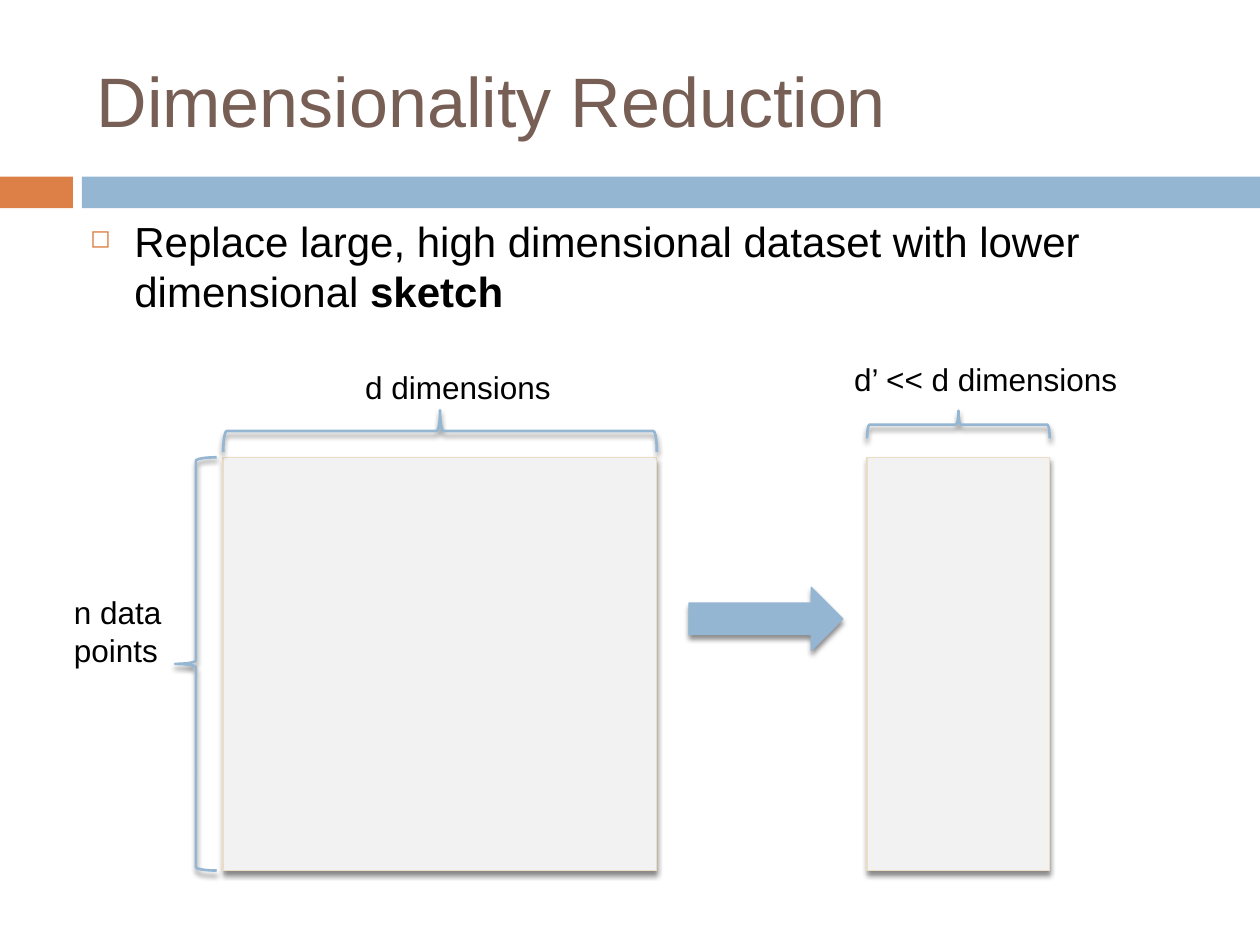
"""Build a slide showing a wide data matrix reduced to a narrow sketch."""
from lxml import etree
from pptx import Presentation
from pptx import util as u
from pptx.dml import color
from pptx.enum import shapes, text
from pptx.oxml import ns

COLORS = {
    "orange": "DD8047",
    "blue": "94B6D2",
    "brown": "775F55",
    "gray": "F2F2F2",
    "sand": "EBDDC3",
    "black": "000000",
}
SHAPE = shapes.MSO_SHAPE
MATRIX_TOP, MATRIX_HEIGHT = 9.22, 8.33
FULL_LEFT, FULL_WIDTH = 4.5, 8.74
SKETCH_LEFT, SKETCH_WIDTH = 17.48, 3.68


def rgb(name):
    return color.RGBColor.from_string(COLORS[name])


def sub(parent, tag, **attrs):
    return etree.SubElement(parent, ns.qn(tag), attrs)


def add_shadow(sp):
    effects = sub(sp._element.spPr, "a:effectLst")
    shadow = sub(effects, "a:outerShdw", blurRad=str(u.Pt(3)), dist=str(u.Pt(2.4)),
                 dir="5400000", rotWithShape="0")
    tint = sub(shadow, "a:srgbClr", val=COLORS["black"])
    sub(tint, "a:alpha", val="45000")


def add_figure(s, kind, box, fill=None, line=None, width=0.79, shadow=True):
    sp = s.shapes.add_shape(kind, *map(u.Cm, box))
    if fill:
        sp.fill.solid()
        sp.fill.fore_color.rgb = rgb(fill)
    else:
        sp.fill.background()
    if line:
        sp.line.color.rgb = rgb(line)
        sp.line.width = u.Pt(width)
    else:
        sp.line.fill.background()
    if shadow:
        add_shadow(sp)
    else:
        sp.shadow.inherit = False
    return sp


def add_matrix(s, left, width):
    box = (left, MATRIX_TOP, width, MATRIX_HEIGHT)
    add_figure(s, SHAPE.RECTANGLE, box, "gray", "sand")


def add_brace(s, box):
    return add_figure(s, SHAPE.LEFT_BRACE, box, line="blue", width=1.5)


def add_top_brace(s, left, width, middle, depth):
    box = (left + (width - depth) / 2, middle - width / 2, depth, width)
    add_brace(s, box).rotation = 90


def add_text(s, box, words, size, fill="black", anchor=text.MSO_ANCHOR.TOP):
    tf = s.shapes.add_textbox(*map(u.Cm, box)).text_frame
    tf.word_wrap = True
    tf.vertical_anchor = anchor
    p = tf.paragraphs[0]
    p.text = words
    p.font.size = u.Pt(size)
    for r in p.runs:
        format_run(r, size, fill)
    return p


def format_run(r, size, fill, bold=False):
    r.font.name = "Arial"
    r.font.size = u.Pt(size)
    r.font.color.rgb = rgb(fill)
    r.font.bold = bold


def add_bullet(p):
    p.space_before = u.Pt(7)
    pPr = p._p.get_or_add_pPr()
    indent = u.Cm(0.89)
    pPr.set("marL", str(indent))
    pPr.set("indent", str(-indent))
    sub(sub(pPr, "a:buClr"), "a:srgbClr", val=COLORS["orange"])
    sub(pPr, "a:buSzPct", val="60000")
    sub(pPr, "a:buChar", char="◻")


def add_header(s):
    bar_top, bar_height = 3.56, 0.64
    for left, width, fill in ((0, 1.47, "orange"), (1.65, 23.75, "blue")):
        box = (left, bar_top, width, bar_height)
        add_figure(s, SHAPE.RECTANGLE, box, fill, shadow=False)
    add_text(s, (1.7, 0.64, 22.66, 2.74), "Dimensionality Reduction", 40, "brown",
             text.MSO_ANCHOR.MIDDLE)


def add_body(s):
    p = add_text(s, (1.57, 4.22, 22.66, 12.5),
                 "Replace large, high dimensional dataset with lower dimensional ", 24)
    add_bullet(p)
    r = p.add_run()
    r.text = "sketch"
    format_run(r, 24, "black", bold=True)


def add_diagram(s):
    add_matrix(s, FULL_LEFT, FULL_WIDTH)
    add_matrix(s, SKETCH_LEFT, SKETCH_WIDTH)
    add_figure(s, SHAPE.RIGHT_ARROW, (13.89, 11.84, 3.1, 1.27), "blue", "blue")
    add_brace(s, (3.53, MATRIX_TOP, 0.84, MATRIX_HEIGHT))
    add_top_brace(s, FULL_LEFT, FULL_WIDTH, 8.69, 0.84)
    add_top_brace(s, SKETCH_LEFT, SKETCH_WIDTH, 8.56, 0.56)
    add_text(s, (1.24, 11.84, 3.12, 1.8), "n data points", 18)
    add_text(s, (7.11, 7.29, 4.37, 1.02), "d dimensions", 18)
    add_text(s, (16.97, 7.14, 7.49, 1.02), "d’ << d dimensions", 18)


def main():
    prs = Presentation()
    prs.slide_width, prs.slide_height = u.Cm(25.4), u.Cm(19.05)
    s = prs.slides.add_slide(prs.slide_layouts[6])
    add_header(s)
    add_body(s)
    add_diagram(s)
    prs.save("out.pptx")


if __name__ == "__main__":
    main()
